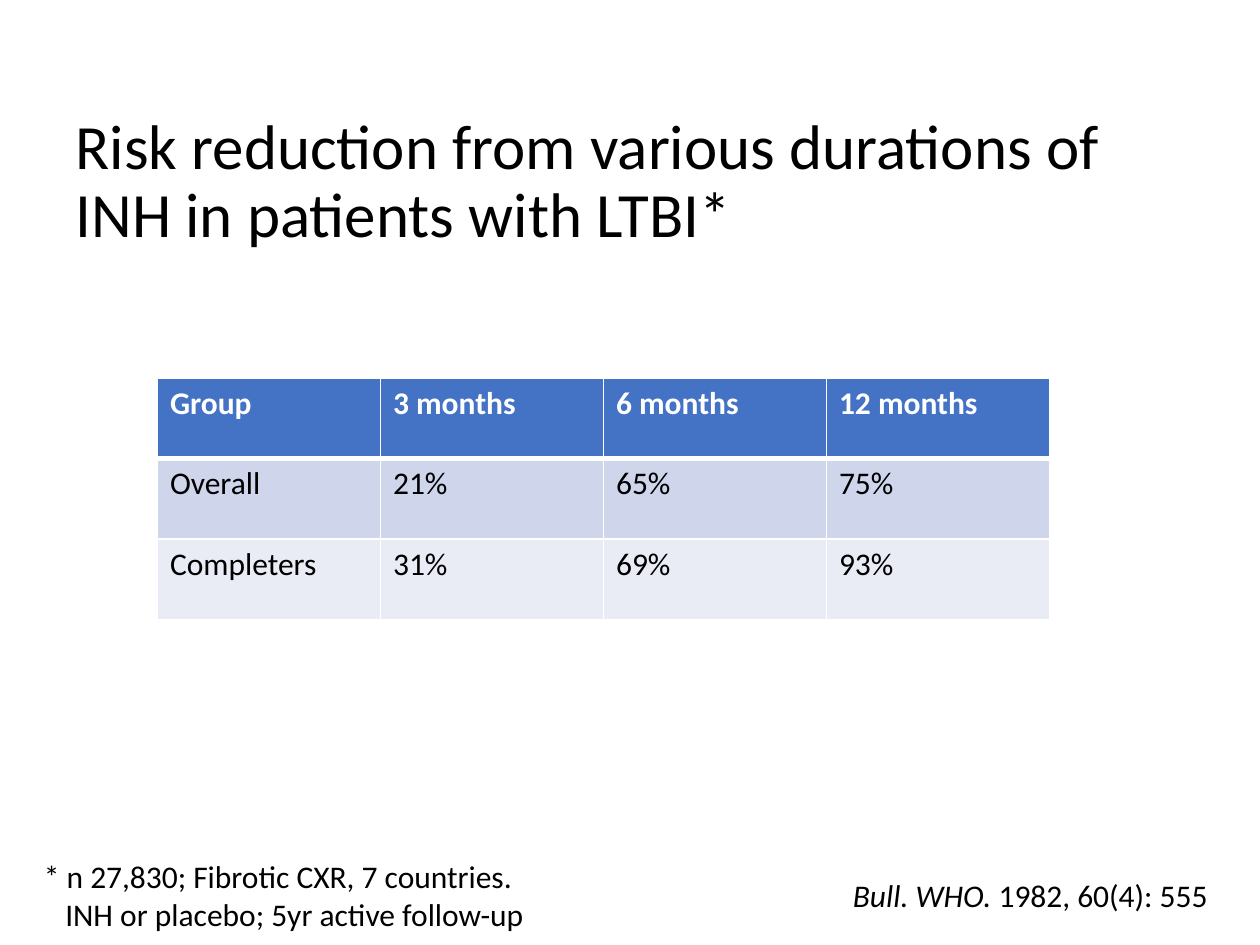
from dataclasses import dataclass

from lxml import etree
from pptx import Presentation
from pptx.dml.color import RGBColor
from pptx.enum import text
from pptx.oxml.ns import qn
from pptx.util import Inches, Pt


@dataclass(frozen=True)
class Theme:
    font: str = "Calibri"
    title_size: int = 36
    body_size: int = 18
    ink: str = "000000"
    white: str = "FFFFFF"
    header: str = "4472C4"
    bands: tuple = ("CFD5EA", "E9EBF5")


@dataclass(frozen=True)
class Run:
    text: str
    italic: bool = False


@dataclass(frozen=True)
class Line:
    runs: tuple
    indent: float = 0


@dataclass(frozen=True)
class Note:
    left: float
    top: float
    width: float
    height: float
    lines: tuple


THEME = Theme()
TITLE = "Risk reduction from various durations of INH in patients with LTBI*"
ROWS = (
    ("Group", "3 months", "6 months", "12 months"),
    ("Overall", "21%", "65%", "75%"),
    ("Completers", "31%", "69%", "93%"),
)
NOTES = (
    Note(6.67, 6.9, 3.05, 0.4, (
        Line((Run("Bull. WHO. ", italic=True), Run("1982, 60(4): 555"))),
    )),
    Note(0.25, 6.75, 4.06, 0.71, (
        Line((Run("* n 27,830; Fibrotic CXR, 7 countries."),)),
        Line((Run("INH or placebo; 5yr active follow-up"),), indent=0.17),
    )),
)


def style(font, size: int = THEME.body_size, color: str = THEME.ink, **extra) -> None:
    for key, value in {"name": THEME.font, "size": Pt(size), **extra}.items():
        setattr(font, key, value)
    font.color.rgb = RGBColor.from_string(color)


def add_title(s) -> None:
    sp = s.shapes.title
    box = {"left": 0.5, "top": 0.83, "width": 9, "height": 1.25}
    for key, value in box.items():
        setattr(sp, key, Inches(value))
    tf = sp.text_frame
    tf.text = TITLE
    tf.word_wrap = True
    tf.auto_size = text.MSO_AUTO_SIZE.NONE
    tf.vertical_anchor = text.MSO_ANCHOR.MIDDLE
    p = tf.paragraphs[0]
    p.alignment = text.PP_ALIGN.LEFT
    p.line_spacing = 0.9
    style(p.runs[0].font, THEME.title_size)


def set_borders(cell, widths: dict) -> None:
    """Draw white borders, widths in points; call before filling the cell."""
    tc_pr = cell._tc.get_or_add_tcPr()
    for side, width in widths.items():
        ln = etree.SubElement(tc_pr, qn(f"a:ln{side}"), w=str(Pt(width)))
        fill = etree.SubElement(ln, qn("a:solidFill"))
        etree.SubElement(fill, qn("a:srgbClr"), val=THEME.white)


def add_risk_table(s) -> None:
    table = s.shapes.add_table(len(ROWS), len(ROWS[0]), Inches(1.25), Inches(3),
                               Inches(7.08), Inches(1.92)).table
    for i, row in enumerate(ROWS):
        is_header = i == 0
        fill = THEME.header if is_header else THEME.bands[(i - 1) % 2]
        borders = {"L": 1, "R": 1, "T": 3 if i == 1 else 1, "B": 3 if is_header else 1}
        for j, value in enumerate(row):
            cell = table.cell(i, j)
            set_borders(cell, borders)
            cell.fill.solid()
            cell.fill.fore_color.rgb = RGBColor.from_string(fill)
            cell.text = value
            style(cell.text_frame.paragraphs[0].runs[0].font, bold=is_header,
                  color=THEME.white if is_header else THEME.ink)


def add_note(s, note: Note) -> None:
    sp = s.shapes.add_textbox(Inches(note.left), Inches(note.top),
                              Inches(note.width), Inches(note.height))
    tf = sp.text_frame
    tf.word_wrap = False
    tf.auto_size = text.MSO_AUTO_SIZE.SHAPE_TO_FIT_TEXT
    for i, line in enumerate(note.lines):
        p = tf.add_paragraph() if i else tf.paragraphs[0]
        if line.indent:
            p._p.get_or_add_pPr().set("marL", str(Inches(line.indent)))
        for run in line.runs:
            r = p.add_run()
            r.text = run.text
            style(r.font, italic=run.italic)


def main() -> None:
    prs = Presentation()
    prs.slide_width, prs.slide_height = Inches(10), Inches(7.5)
    s = prs.slides.add_slide(prs.slide_layouts[5])
    add_title(s)
    add_risk_table(s)
    for note in NOTES:
        add_note(s, note)
    prs.save("out.pptx")


if __name__ == "__main__":
    main()
